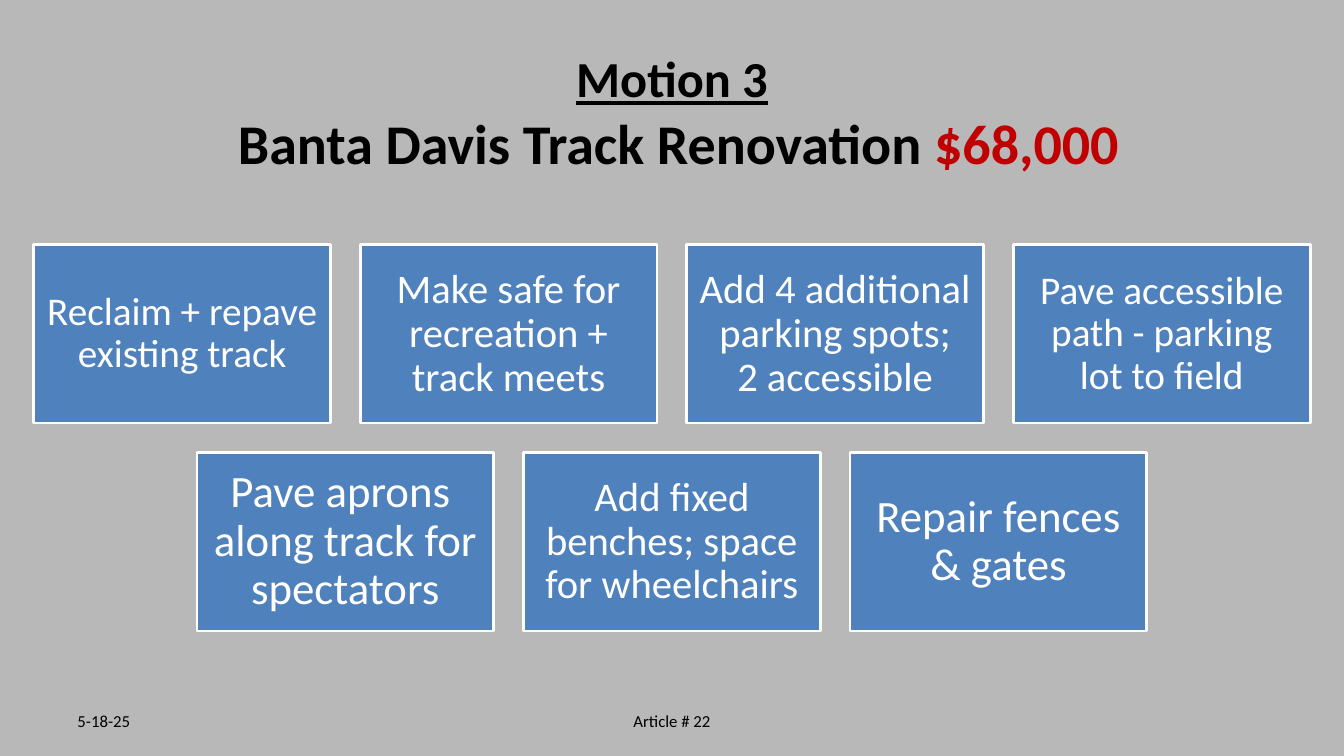
from pptx import Presentation
from pptx.dml.color import RGBColor
from pptx.enum.shapes import MSO_SHAPE
from pptx.enum.text import MSO_ANCHOR, PP_ALIGN
from pptx.util import Inches, Pt

SLIDE_WIDTH, SLIDE_HEIGHT = 13.33, 7.5
MARGIN = 0.67
COLUMNS = 4
GAP = 0.1

WORK_ROWS = [
    [
        (["Reclaim + repave existing track"], 28),
        (["Make safe for recreation + track meets"], 29),
        (["Add 4 additional parking spots;", "2 accessible"], 29),
        (["Pave accessible path - parking lot to field"], 28),
    ],
    [
        (["Pave aprons ", "along track for spectators"], 32),
        (["Add fixed benches; space for wheelchairs"], 29),
        (["Repair fences & gates"], 32),
    ],
]


def rgb(code):
    return RGBColor.from_string(code)


def apply_format(target, values):
    for attribute, value in values.items():
        setattr(target, attribute, value)


def add_words(paragraph, words, size, color="000000", **style):
    run = paragraph.add_run()
    run.text = words
    apply_format(run.font, {"name": "Calibri", "size": Pt(size), **style})
    run.font.color.rgb = rgb(color)


def add_label(slide, box):
    frame = slide.shapes.add_textbox(*map(Inches, box)).text_frame
    apply_format(frame, {"word_wrap": True, "vertical_anchor": MSO_ANCHOR.MIDDLE})
    return frame.paragraphs[0]


def add_heading(slide, box):
    heading = add_label(slide, box)
    heading.alignment = PP_ALIGN.CENTER
    add_words(heading, "Motion 3", 36, bold=True, underline=True)
    heading.add_line_break()
    add_words(heading, " Banta Davis Track Renovation ", 40, bold=True)
    add_words(heading, "$68,000", 40, "C00000", bold=True)


def add_work_item(slide, box, lines, size):
    tile = slide.shapes.add_shape(MSO_SHAPE.RECTANGLE, *map(Inches, box))
    tile.shadow.inherit = False
    tile.fill.solid()
    tile.fill.fore_color.rgb = rgb("4F81BD")
    tile.line.color.rgb = rgb("FFFFFF")
    tile.line.width = Pt(2)
    frame = tile.text_frame
    inset = Inches(0.13 if size > 30 else 0.12)
    sides = ("margin_left", "margin_top", "margin_right", "margin_bottom")
    apply_format(frame, {
        "word_wrap": True,
        "vertical_anchor": MSO_ANCHOR.MIDDLE,
        **dict.fromkeys(sides, inset),
    })
    for index, line in enumerate(lines):
        paragraph = frame.add_paragraph() if index else frame.paragraphs[0]
        apply_format(paragraph, {"alignment": PP_ALIGN.CENTER, "line_spacing": 0.9})
        add_words(paragraph, line, size, "FFFFFF")


def add_work_grid(slide, box):
    left, top, width, height = box
    tile_width = width / (COLUMNS + (COLUMNS - 1) * GAP)
    gap = tile_width * GAP
    tile_height = (height - gap * (len(WORK_ROWS) - 1)) / len(WORK_ROWS)
    pitch = tile_width + gap
    for row, items in enumerate(WORK_ROWS):
        row_left = left + (COLUMNS - len(items)) * pitch / 2
        row_top = top + row * (tile_height + gap)
        for column, (lines, size) in enumerate(items):
            tile_box = (row_left + column * pitch, row_top, tile_width, tile_height)
            add_work_item(slide, tile_box, lines, size)


def add_footer(slide, box):
    left, top, width, height = box
    date_width, article_width = width * 0.26, width * 0.35
    add_words(add_label(slide, (left, top, date_width, height)), "5-18-25", 12)
    article_left = left + (width - article_width) / 2
    article = add_label(slide, (article_left, top, article_width, height))
    article.alignment = PP_ALIGN.CENTER
    add_words(article, "Article # 22", 12)


def main():
    deck = Presentation()
    apply_format(deck, {
        "slide_width": Inches(SLIDE_WIDTH),
        "slide_height": Inches(SLIDE_HEIGHT),
    })
    slide = deck.slides.add_slide(deck.slide_layouts[6])
    slide.background.fill.solid()
    slide.background.fill.fore_color.rgb = rgb("B8B8B8")
    content_width = SLIDE_WIDTH - 2 * MARGIN
    grid_left = MARGIN / 2
    add_heading(slide, (MARGIN, 0.48, content_width, 1.25))
    add_work_grid(slide, (grid_left, 2.43, SLIDE_WIDTH - 2 * grid_left, 3.83))
    add_footer(slide, (MARGIN, 6.95, content_width, 0.4))
    deck.save("out.pptx")


if __name__ == "__main__":
    main()
